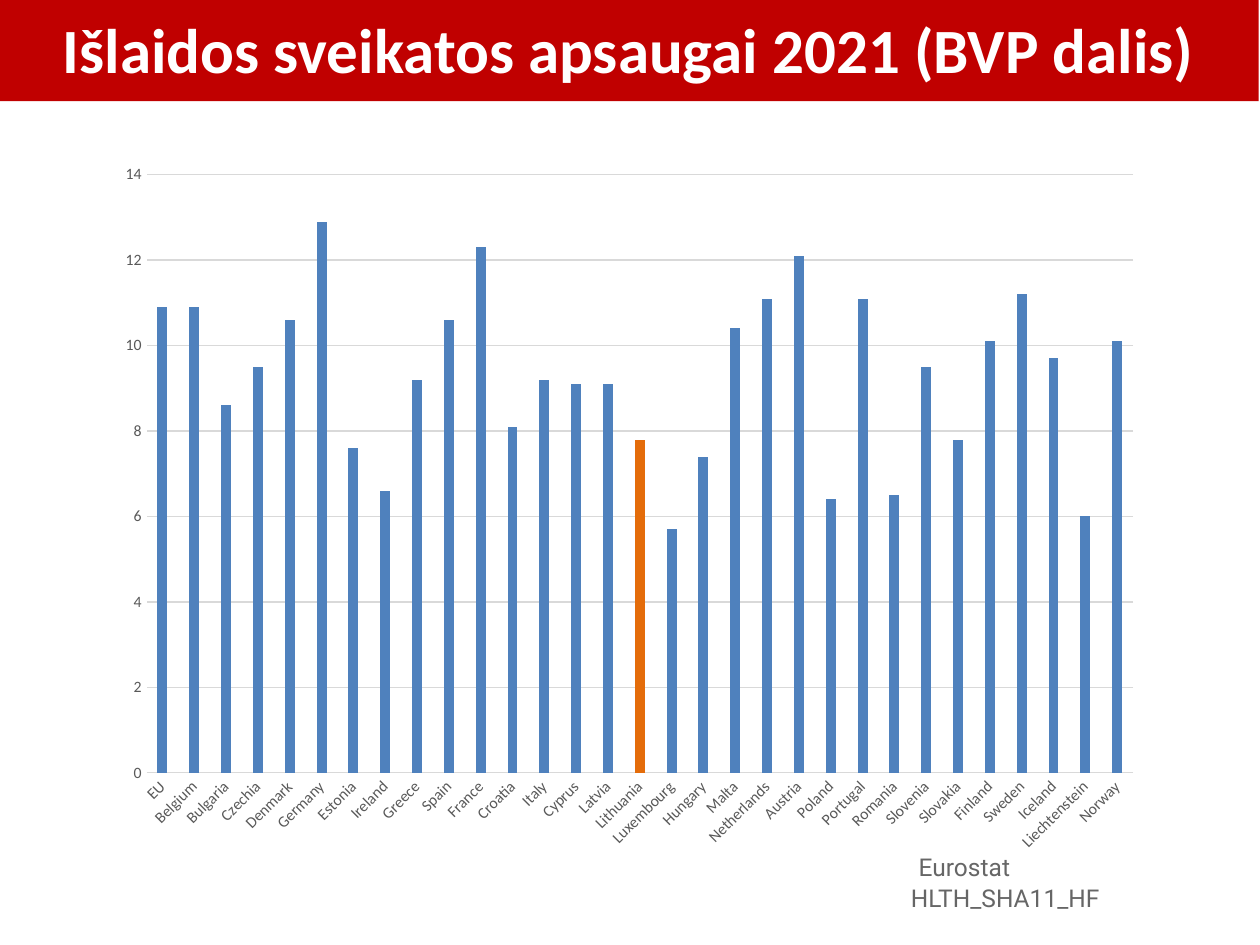
from typing import NamedTuple

from pptx import Presentation
from pptx import util as u
from pptx.chart.data import CategoryChartData
from pptx.dml.color import RGBColor
from pptx.enum import chart as ch
from pptx.enum import text as tx

WIDE, HIGH = 10, 7.5
RED = RGBColor(0xC0, 0x00, 0x00)
WHITE = RGBColor(0xFF, 0xFF, 0xFF)
BLUE = RGBColor(0x4F, 0x81, 0xBD)
ORANGE = RGBColor(0xE4, 0x6C, 0x0A)
GREY = RGBColor(0x66, 0x66, 0x66)
LABEL = RGBColor(0x59, 0x59, 0x59)
RULE = RGBColor(0xD9, 0xD9, 0xD9)


class Box(NamedTuple):
    """A frame in shares of the slide's width and height."""
    x: float
    y: float
    w: float
    h: float

    def place(self) -> tuple:
        sides = (self.x * WIDE, self.y * HIGH, self.w * WIDE, self.h * HIGH)
        return tuple(u.Inches(side) for side in sides)


class Spend(NamedTuple):
    land: str
    share: float


TITLE = Box(-0.001, -0.005, 1, 0.112)
CHART = Box(0.083, 0.16, 0.833, 0.756)
NOTE = Box(0.713, 0.888, 0.252, 0.053)
FOCUS = "Lithuania"
DATA = [
    Spend("EU", 10.9), Spend("Belgium", 10.9), Spend("Bulgaria", 8.6),
    Spend("Czechia", 9.5), Spend("Denmark", 10.6), Spend("Germany", 12.9),
    Spend("Estonia", 7.6), Spend("Ireland", 6.6), Spend("Greece", 9.2),
    Spend("Spain", 10.6), Spend("France", 12.3), Spend("Croatia", 8.1),
    Spend("Italy", 9.2), Spend("Cyprus", 9.1), Spend("Latvia", 9.1),
    Spend("Lithuania", 7.8), Spend("Luxembourg", 5.7), Spend("Hungary", 7.4),
    Spend("Malta", 10.4), Spend("Netherlands", 11.1), Spend("Austria", 12.1),
    Spend("Poland", 6.4), Spend("Portugal", 11.1), Spend("Romania", 6.5),
    Spend("Slovenia", 9.5), Spend("Slovakia", 7.8), Spend("Finland", 10.1),
    Spend("Sweden", 11.2), Spend("Iceland", 9.7), Spend("Liechtenstein", 6),
    Spend("Norway", 10.1),
]


def style(font, *, size: float, color: RGBColor, name="Calibri", bold=False) -> None:
    font.size, font.name, font.bold = u.Pt(size), name, bold
    font.color.rgb = color


def write(para, words: str, **look) -> None:
    run = para.add_run()
    run.text = words
    style(run.font, **look)


def rule(line) -> None:
    line.color.rgb = RULE
    line.width = u.Pt(0.75)


def head(slide) -> None:
    title = slide.shapes.title
    title.left, title.top, title.width, title.height = TITLE.place()
    title.fill.solid()
    title.fill.fore_color.rgb = RED
    frame = title.text_frame
    frame.auto_size = tx.MSO_AUTO_SIZE.NONE
    frame.vertical_anchor = tx.MSO_ANCHOR.MIDDLE
    para = frame.paragraphs[0]
    para.alignment = tx.PP_ALIGN.CENTER
    write(para, "Išlaidos sveikatos apsaugai 2021 (BVP dalis)",
          size=36, color=WHITE, bold=True)


def note(slide) -> None:
    frame = slide.shapes.add_textbox(*NOTE.place()).text_frame
    frame.word_wrap = True
    frame.auto_size = tx.MSO_AUTO_SIZE.SHAPE_TO_FIT_TEXT
    para = frame.paragraphs[0]
    for words, size in ((" ", 18), ("Eurostat HLTH_SHA11_HF", 14)):
        write(para, words, size=size, color=GREY, name="Roboto")


def bars(slide) -> None:
    data = CategoryChartData()
    data.categories = [row.land for row in DATA]
    data.add_series("Series 1", [row.share for row in DATA])
    kind = ch.XL_CHART_TYPE.COLUMN_CLUSTERED
    chart = slide.shapes.add_chart(kind, *CHART.place(), data).chart
    chart.has_legend = chart.has_title = False
    style(chart.font, size=10, color=RGBColor(0, 0, 0))

    plot = chart.plots[0]
    plot.vary_by_categories = False
    plot.gap_width, plot.overlap = 219, -27
    series = plot.series[0]
    lands = [row.land for row in DATA]
    focus = series.points[lands.index(FOCUS)]
    for part, color in ((series, BLUE), (focus, ORANGE)):
        part.format.fill.solid()
        part.format.fill.fore_color.rgb = color

    cat, val = chart.category_axis, chart.value_axis
    for axis in (cat, val):
        axis.major_tick_mark = axis.minor_tick_mark = ch.XL_TICK_MARK.NONE
        style(axis.tick_labels.font, size=9, color=LABEL)
    rule(cat.format.line)
    turn = cat._element.txPr.bodyPr
    turn.set("rot", str(-45 * 60000))
    turn.set("vert", "horz")
    val.format.line.fill.background()
    val.has_major_gridlines = True
    rule(val.major_gridlines.format.line)
    val.minimum_scale, val.maximum_scale, val.major_unit = 0, 14, 2
    val.tick_labels.number_format = "General"
    val.tick_labels.number_format_is_linked = False


def main() -> None:
    deck = Presentation()
    deck.slide_width, deck.slide_height = u.Inches(WIDE), u.Inches(HIGH)
    slide = deck.slides.add_slide(deck.slide_layouts[5])
    head(slide)
    note(slide)
    bars(slide)
    deck.save("out.pptx")


if __name__ == "__main__":
    main()
